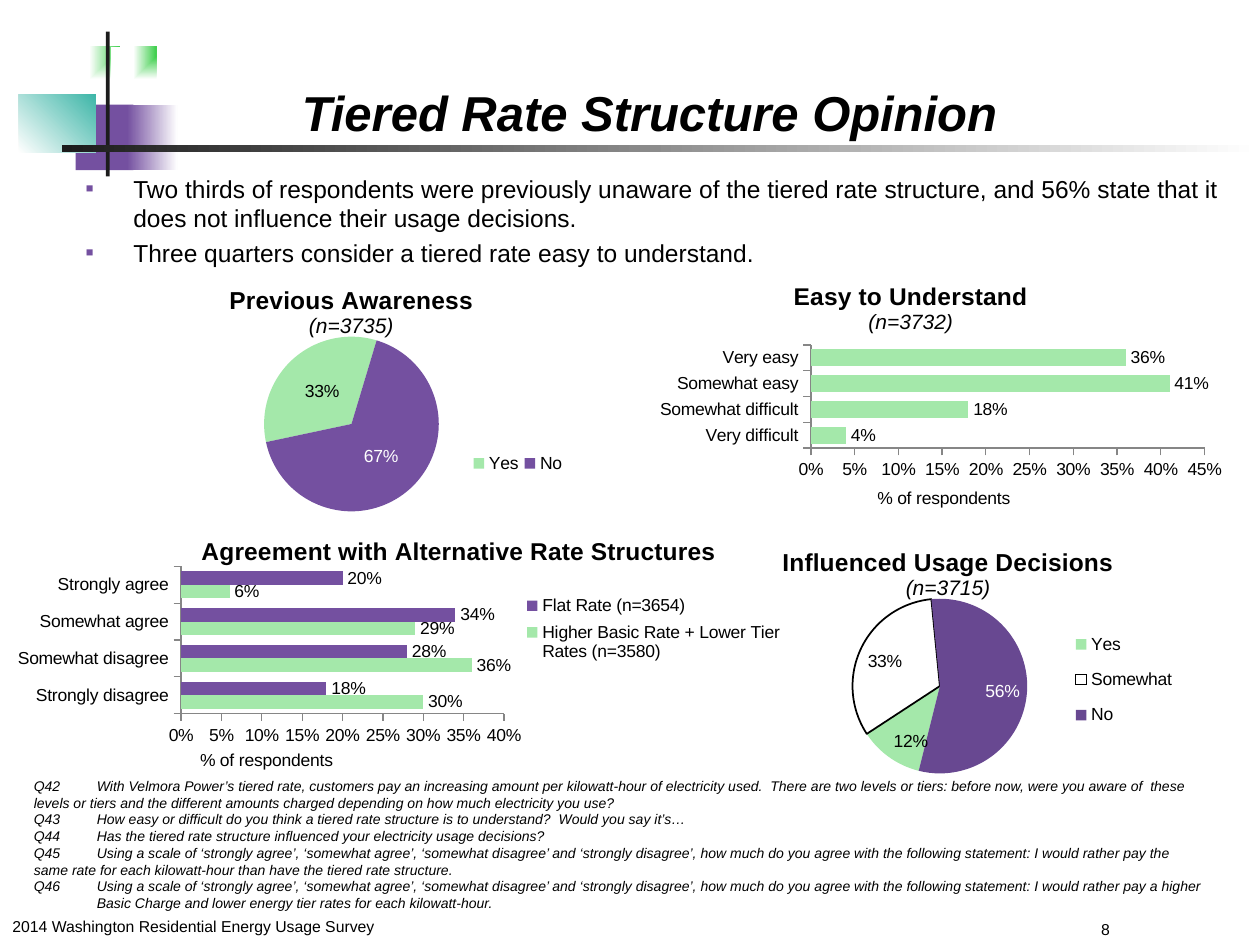
import pptx
import pptx.chart.data
import pptx.dml.color
import pptx.enum.chart
import pptx.enum.shapes
import pptx.enum.text
import pptx.oxml
import pptx.oxml.ns
import pptx.util
from pptx.util import Inches

GREEN, PURPLE, DARK_PURPLE = "A4E8AA", "7450A0", "684891"
BLACK, WHITE, GREY = "000000", "FFFFFF", "868686"
XL = pptx.enum.chart
CENTER = pptx.enum.text.PP_ALIGN.CENTER
NS = pptx.oxml.ns.nsdecls("a", "c")
rgb = pptx.dml.color.RGBColor.from_string


def write(paragraph, text, size=10, bold=False, italic=False, color=BLACK, align=None):
    paragraph.alignment = align
    run = paragraph.add_run()
    run.text = text
    font = run.font
    font.name, font.size = "Arial", pptx.util.Pt(size)
    font.bold, font.italic = bold, italic
    font.color.rgb = rgb(color)


def place(part, index, x, y, w=None, h=None, inner=False):
    """Give a chart part a fixed place, in fractions of the chart."""
    for old in part.xpath("c:layout"):
        part.remove(old)
    rows = '<c:layoutTarget val="inner"/>' if inner else ""
    rows += '<c:xMode val="edge"/><c:yMode val="edge"/>'
    rows += f'<c:x val="{x}"/><c:y val="{y}"/>'
    if w:
        rows += f'<c:w val="{w}"/><c:h val="{h}"/>'
    part.insert(index, pptx.oxml.parse_xml(
        f"<c:layout {NS}><c:manualLayout>{rows}</c:manualLayout></c:layout>"))


prs = pptx.Presentation()
prs.slide_width, prs.slide_height = Inches(10), Inches(7.5)
slide = prs.slides.add_slide(prs.slide_layouts[5])

# Corner decoration: box, colours from first to last stop, angle or "corner"
decoration = [
    ((0.47, 0.37, 0.48, 0.52), ("3FCF4D", WHITE), "corner"),
    ((0.88, 0.37, 0.36, 0.52), ("3FCF4D", WHITE), "corner"),
    ((0.6, 0.83, 0.46, 0.52), (PURPLE,), None),
    ((1.01, 0.83, 0.4, 0.52), (PURPLE, WHITE), 0),
    ((0.15, 0.75, 0.61, 0.46), (WHITE, "3EB6A8"), 45),
    ((0.84, 0.25, 0.03, 1.15), ("1C1C1C",), None),
    ((0.49, 1.15, 9.51, 0.06), ("1C1C1C", WHITE), 0),
]
for box, colors, direction in decoration:
    block = slide.shapes.add_shape(
        pptx.enum.shapes.MSO_SHAPE.RECTANGLE, *map(Inches, box))
    block.shadow.inherit = False
    block.line.fill.background()
    if len(colors) == 1:
        block.fill.solid()
        block.fill.fore_color.rgb = rgb(colors[0])
        continue
    block.fill.gradient()
    for stop, color in zip(block.fill.gradient_stops, colors):
        stop.color.rgb = rgb(color)
    if direction == "corner":
        linear = block.element.xpath(".//a:gradFill/a:lin")[0]
        linear.getparent().replace(linear, pptx.oxml.parse_xml(
            f'<a:path {NS} path="rect"><a:fillToRect l="100000" b="100000"/></a:path>'))
    else:
        block.fill.gradient_angle = direction

# Title
title = slide.shapes.title
title.left, title.top, title.width, title.height = map(Inches, (0.56, -0.08, 9.19, 1.25))
title.text_frame.vertical_anchor = pptx.enum.text.MSO_ANCHOR.BOTTOM
write(title.text_frame.paragraphs[0], "Tiered Rate Structure Opinion",
      size=28, bold=True, italic=True, align=CENTER)

# Text boxes: findings, survey questions, footer and page number
findings = [
    "Two thirds of respondents were previously unaware of the tiered rate structure, and 56% state that it does not influence their usage decisions.",
    "Three quarters consider a tiered rate easy to understand.",
]
questions = [
    "Q42\tWith Velmora Power’s tiered rate, customers pay an increasing amount per kilowatt-hour of electricity used.  There are two levels or tiers: before now, were you aware of  these \tlevels or tiers and the different amounts charged depending on how much electricity you use?",
    "Q43\tHow easy or difficult do you think a tiered rate structure is to understand?  Would you say it’s…",
    "Q44\tHas the tiered rate structure influenced your electricity usage decisions?",
    "Q45\tUsing a scale of ‘strongly agree’, ‘somewhat agree’, ‘somewhat disagree’ and ‘strongly disagree’, how much do you agree with the following statement: I would rather pay the \tsame rate for each kilowatt-hour than have the tiered rate structure.",
    "Q46\tUsing a scale of ‘strongly agree’, ‘somewhat agree’, ‘somewhat disagree’ and ‘strongly disagree’, how much do you agree with the following statement: I would rather pay a higher \tBasic Charge and lower energy tier rates for each kilowatt-hour.",
]
bullet = [f'<a:buClr {NS}><a:srgbClr val="{PURPLE}"/></a:buClr>',
          f'<a:buFont {NS} typeface="Arial"/>', f'<a:buChar {NS} char="▪"/>']
tabs = [f'<a:tabLst {NS}><a:tab pos="{Inches(0.5)}" algn="l"/></a:tabLst>']
texts = [
    ((0.58, 1.33, 9.25, 1.25), findings, bullet, dict(size=14)),
    ((0.17, 6.12, 9.5, 1.31), questions, tabs, dict(size=8, italic=True)),
    ((0, 7.23, 3.25, 0.25), ["2014 Washington Residential Energy Usage Survey"], [], dict(size=9)),
    ((8.64, 7.25, 1.36, 0.24), ["8"], [], dict(size=9)),
]
for box, lines, extras, style in texts:
    frame = slide.shapes.add_textbox(*map(Inches, box)).text_frame
    frame.word_wrap = True
    for i, line in enumerate(lines):
        paragraph = frame.add_paragraph() if i else frame.paragraphs[0]
        properties = paragraph._p.get_or_add_pPr()
        for extra in extras:
            properties.append(pptx.oxml.parse_xml(extra))
        if extras is bullet:
            properties.set("marL", str(Inches(0.38)))
            properties.set("indent", str(-Inches(0.38)))
            if i:
                paragraph.space_before = pptx.util.Pt(2.8)
        write(paragraph, line, **style)

# Charts
charts = [
    dict(box=(4.26, 2, 5.58, 2.08), title="Easy to Understand", count="(n=3732)",
         title_at=(0.36, 0.1), plot=(0.39, 0.36, 0.56, 0.4), gap=50, top=0.45, axis_at=(0.48, 0.9),
         cats=["Very difficult", "Somewhat difficult", "Somewhat easy", "Very easy"],
         series={"Series 1": (0.04, 0.18, 0.41, 0.36)}, colors=[GREEN]),
    dict(box=(5.5, 4.25, 4, 2.01), title="Influenced Usage Decisions", count="(n=3715)",
         title_at=(0.17, 0.03), plot=(0.29, 0.25, 0.4, 0.69), legend=(0.72, 0.33, 0.27, 0.48),
         start=194, percent=False, cats=["Yes", "Somewhat", "No"],
         series={"Series 1": (0.12, 0.33, 0.56)}, colors=[GREEN, WHITE, DARK_PURPLE]),
    dict(box=(0, 4.16, 6.25, 2), title="Agreement with Alternative Rate Structures", count=None,
         title_at=(0.25, 0.03), plot=(0.23, 0.17, 0.41, 0.59), legend=(0.66, 0.26, 0.34, 0.32),
         gap=73, top=0.4, axis_at=(0.25, 0.89),
         cats=["Strongly disagree", "Somewhat disagree", "Somewhat agree", "Strongly agree"],
         series={"Higher Basic Rate + Lower Tier Rates (n=3580)": (0.3, 0.36, 0.29, 0.06),
                 "Flat Rate (n=3654)": (0.18, 0.28, 0.34, 0.2)}, colors=[GREEN, PURPLE]),
    dict(box=(0.83, 2.17, 4, 2.01), title="Previous Awareness", count="(n=3735)",
         title_at=(0.24, 0.03), plot=(0.29, 0.25, 0.4, 0.69), legend=(0.72, 0.61, 0.2, 0.28),
         start=258, percent=True, cats=["Yes", "No"],
         series={"Series 1": (33, 67)}, colors=[GREEN, PURPLE]),
]
for spec_ in charts:
    is_pie = "start" in spec_
    data = pptx.chart.data.CategoryChartData(
        number_format="General" if spec_.get("percent") else "0%")
    data.categories = spec_["cats"]
    for name, values in spec_["series"].items():
        data.add_series(name, values)
    kind = XL.XL_CHART_TYPE.PIE if is_pie else XL.XL_CHART_TYPE.BAR_CLUSTERED
    chart = slide.shapes.add_chart(kind, *map(Inches, spec_["box"]), data).chart
    chart.font.name, chart.font.size = "Arial", pptx.util.Pt(10)
    chart.font.color.rgb = rgb(BLACK)

    heading = chart.chart_title.text_frame
    write(heading.paragraphs[0], spec_["title"], size=14, bold=True, align=CENTER)
    if spec_["count"]:
        write(heading.add_paragraph(), spec_["count"], size=12, italic=True, align=CENTER)
    place(chart.element.xpath("c:chart/c:title")[0], 1, *spec_["title_at"])
    place(chart.element.xpath("c:chart/c:plotArea")[0], 0, *spec_["plot"], inner=True)

    chart.has_legend = "legend" in spec_
    if chart.has_legend:
        chart.legend.position = XL.XL_LEGEND_POSITION.RIGHT
        chart.legend.include_in_layout = False
        chart.legend.font.size = pptx.util.Pt(10)
        place(chart.element.xpath("c:chart/c:legend")[0], 1, *spec_["legend"])

    plot = chart.plots[0]
    plot.vary_by_categories = is_pie
    plot.has_data_labels = True
    labels = plot.data_labels
    labels.number_format, labels.number_format_is_linked = "0%", False
    labels.font.size = pptx.util.Pt(10)
    labels.show_percentage = spec_.get("percent", False)
    labels.show_value = not labels.show_percentage
    position = XL.XL_LABEL_POSITION
    labels.position = (position.OUTSIDE_END if not is_pie else
                       position.CENTER if spec_["percent"] else position.INSIDE_END)

    if is_pie:
        chart.element.xpath(".//c:pieChart")[0].append(pptx.oxml.parse_xml(
            f'<c:firstSliceAng {NS} val="{spec_["start"]}"/>'))
        for i, color in enumerate(spec_["colors"]):
            point = plot.series[0].points[i]
            point.format.fill.solid()
            point.format.fill.fore_color.rgb = rgb(color)
            if color == WHITE:
                point.format.line.color.rgb = rgb(BLACK)
                point.format.line.width = pptx.util.Pt(1)
            label = point.data_label
            label.font.size = pptx.util.Pt(10)
            label.font.color.rgb = rgb(WHITE if color in (PURPLE, DARK_PURPLE) else BLACK)
            label.position = labels.position
            entry = chart.element.xpath(".//c:ser/c:dLbls/c:dLbl")[i]
            entry.insert(1, pptx.oxml.parse_xml(
                f'<c:numFmt {NS} formatCode="0%" sourceLinked="0"/>'))
            entry.xpath("c:showVal")[0].set("val", str(int(labels.show_value)))
            entry.xpath("c:showPercent")[0].set("val", str(int(labels.show_percentage)))
    else:
        plot.gap_width, plot.overlap = spec_["gap"], 0
        for series, color in zip(plot.series, spec_["colors"]):
            series.format.fill.solid()
            series.format.fill.fore_color.rgb = rgb(color)
        for axis in (chart.category_axis, chart.value_axis):
            axis.has_major_gridlines = False
            axis.major_tick_mark = XL.XL_TICK_MARK.OUTSIDE
            axis.format.line.color.rgb = rgb(GREY)
            axis.tick_labels.font.size = pptx.util.Pt(10)
        axis.minimum_scale, axis.maximum_scale, axis.major_unit = 0, spec_["top"], 0.05
        axis.tick_labels.number_format = "0%"
        axis.tick_labels.number_format_is_linked = False
        write(axis.axis_title.text_frame.paragraphs[0], "% of respondents")
        place(chart.element.xpath(".//c:valAx/c:title")[0], 1, *spec_["axis_at"])

prs.save("out.pptx")
